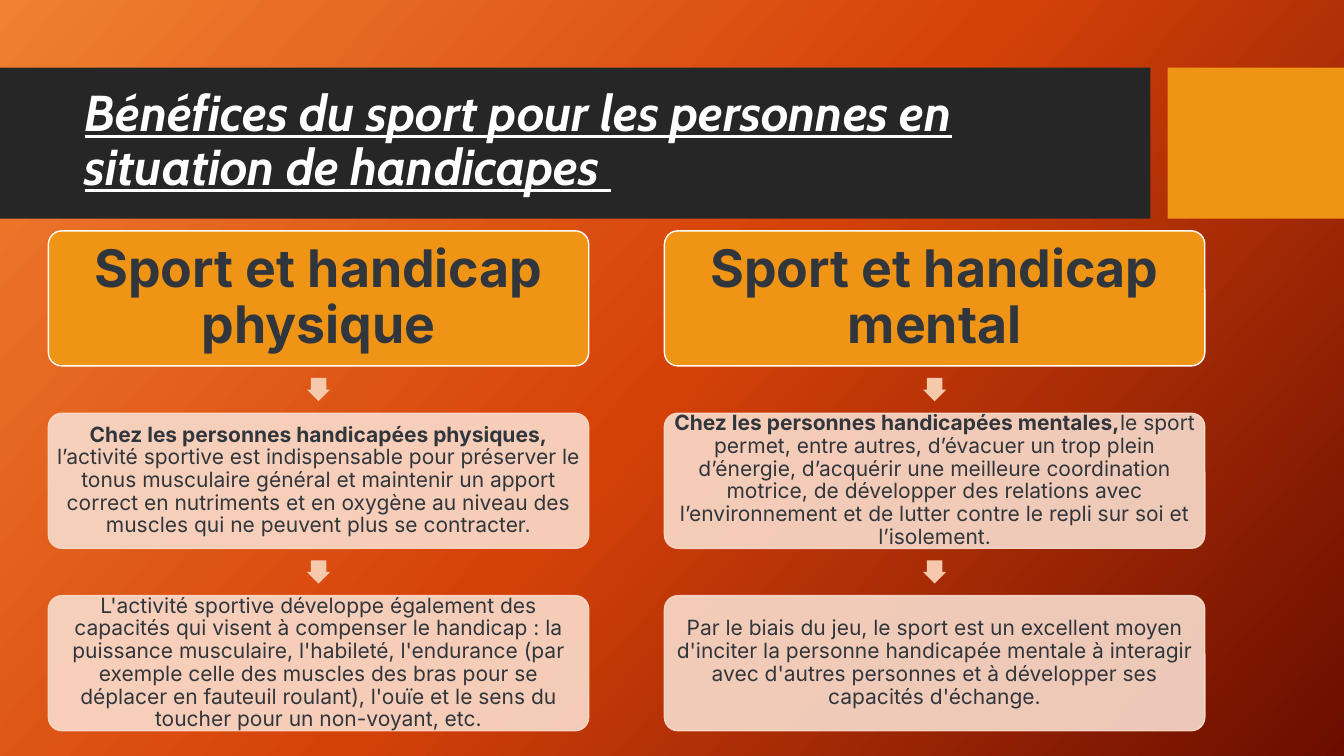
from dataclasses import dataclass
from lxml.etree import SubElement as Sub
from copy import deepcopy
from pptx import Presentation
from pptx.dml.color import RGBColor as RGB
from pptx.enum.shapes import MSO_SHAPE as Shape
from pptx.enum.text import MSO_ANCHOR as Anchor, PP_ALIGN as Align
from pptx.oxml.ns import qn
from pptx.util import Inches as Inch, Pt

WHITE = RGB(0xFF, 0xFF, 0xFF)
DARK = RGB(0x26, 0x26, 0x26)
SLATE = RGB(0x31, 0x36, 0x3C)
GOLD = RGB(0xF0, 0x94, 0x15)
PEACH = RGB(0xF6, 0xC8, 0xAC)
CREAM = RGB(0xF9, 0xDC, 0xCC)
BLAZE = (RGB(0xF1, 0x80, 0x31), RGB(0xD5, 0x42, 0x09), RGB(0x6A, 0x0D, 0x00))

WIDE, HIGH = 13.33, 7.5
LEFT, TOP = 0.48, 2.29
COL, ROW = 6.11, 1.81
CARD_W, CARD_H = 5.36, 1.34
TIP = 0.23
BAND_Y, BAND_H = 0.67, 1.5


@dataclass(frozen=True)
class Box:
    x: float
    y: float
    w: float
    h: float

    def place(self) -> tuple:
        return tuple(Inch(v) for v in (self.x, self.y, self.w, self.h))


@dataclass(frozen=True)
class Card:
    col: int
    row: int
    lead: str = ""
    body: str = ""

    def box(self) -> Box:
        return Box(LEFT + self.col * COL, TOP + self.row * ROW, CARD_W, CARD_H)


CARDS = (
    Card(0, 0, "Sport et handicap physique"),
    Card(0, 1, "Chez les personnes handicapées physiques,",
         " l’activité sportive est indispensable pour préserver le tonus musculaire général "
         "et maintenir un apport correct en nutriments et en oxygène au niveau des muscles "
         "qui ne peuvent plus se contracter."),
    Card(0, 2, body="L'activité sportive développe également des capacités qui visent à "
         "compenser le handicap : la puissance musculaire, l'habileté, l'endurance (par "
         "exemple celle des muscles des bras pour se déplacer en fauteuil roulant), l'ouïe "
         "et le sens du toucher pour un non-voyant, etc."),
    Card(1, 0, "Sport et handicap mental"),
    Card(1, 1, "Chez les personnes handicapées mentales,",
         "le sport permet, entre autres, d’évacuer un trop plein d’énergie, d’acquérir une "
         "meilleure coordination motrice, de développer des relations avec l’environnement "
         "et de lutter contre le repli sur soi et l’isolement."),
    Card(1, 2, body="Par le biais du jeu, le sport est un excellent moyen d'inciter la "
         "personne handicapée mentale à interagir avec d'autres personnes et à développer "
         "ses capacités d'échange."),
)


def write(shape, *runs: tuple[str, bool], size: float, face: str, ink: RGB,
          align=Align.LEFT, pad: float | None = None, slant: bool = False) -> None:
    frame = shape.text_frame
    frame.word_wrap = True
    frame.vertical_anchor = Anchor.MIDDLE
    if pad is not None:
        frame.margin_left = frame.margin_right = Inch(pad)
        frame.margin_top = frame.margin_bottom = Inch(pad)
    para = frame.paragraphs[0]
    para.alignment = align
    para.line_spacing = 0.9
    for text, bold in runs:
        if not text:
            continue
        run = para.add_run()
        run.text = text
        font = run.font
        font.name, font.size, font.bold = face, Pt(size), bold
        font.italic = font.underline = slant
        font.color.rgb = ink


def fade(fill, share: int) -> None:
    tint = fill._xPr.find(qn("a:solidFill"))[0]
    Sub(tint, qn("a:alpha"), val=str(share * 1000))


def draw(slide, kind, box: Box, paint: RGB, edge: RGB | None = None,
         bends: tuple = (), share: int = 100):
    shape = slide.shapes.add_shape(kind, *box.place())
    shape.shadow.inherit = False
    for i, bend in enumerate(bends):
        shape.adjustments[i] = bend
    shape.fill.solid()
    shape.fill.fore_color.rgb = paint
    fills = [shape.fill]
    if edge is None:
        shape.line.fill.background()
    else:
        shape.line.color.rgb = edge
        shape.line.width = Pt(1)
        fills.append(shape.line.fill)
    if share < 100:
        for fill in fills:
            fade(fill, share)
    return shape


def blend(slide) -> None:
    fill = slide.background.fill
    fill.gradient()
    fill.gradient_angle = 360 - 42
    last = fill._xPr.find(qn("a:gradFill")).find(qn("a:gsLst"))[-1]
    last.addprevious(deepcopy(last))
    for i, (stop, tone) in enumerate(zip(fill.gradient_stops, BLAZE)):
        stop.position = i / 2
        stop.color.rgb = tone


def head(slide) -> None:
    draw(slide, Shape.RECTANGLE, Box(0, BAND_Y, 11.41, BAND_H), DARK)
    draw(slide, Shape.RECTANGLE, Box(11.58, BAND_Y, WIDE - 11.58, BAND_H), GOLD)
    title = slide.shapes.add_textbox(*Box(0.74, 0.82, 10.51, 1.18).place())
    write(title, ("Bénéfices du sport pour les personnes en situation de handicapes ", True),
          size=36, face="Cabin", ink=WHITE, slant=True)


def panel(slide, card: Card) -> None:
    box = card.box()
    top = card.row == 0
    if not top:
        mid = box.y - (ROW - CARD_H) / 2
        tip = Box(box.x + (CARD_W - TIP) / 2, mid - TIP / 2, TIP, TIP)
        draw(slide, Shape.DOWN_ARROW, tip, PEACH, bends=(0.667, 0.5))
    shape = draw(slide, Shape.ROUNDED_RECTANGLE, box, GOLD if top else CREAM,
                 WHITE if top else CREAM, (0.1,), 100 if top else 90)
    write(shape, (card.lead, True), (card.body, False), size=37 if top else 15,
          face="Inter", ink=SLATE, align=Align.CENTER, pad=0.05 if top else 0.02)


def main() -> None:
    deck = Presentation()
    deck.slide_width, deck.slide_height = Inch(WIDE), Inch(HIGH)
    slide = deck.slides.add_slide(deck.slide_layouts[6])
    blend(slide)
    head(slide)
    for card in CARDS:
        panel(slide, card)
    deck.save("out.pptx")


if __name__ == "__main__":
    main()
